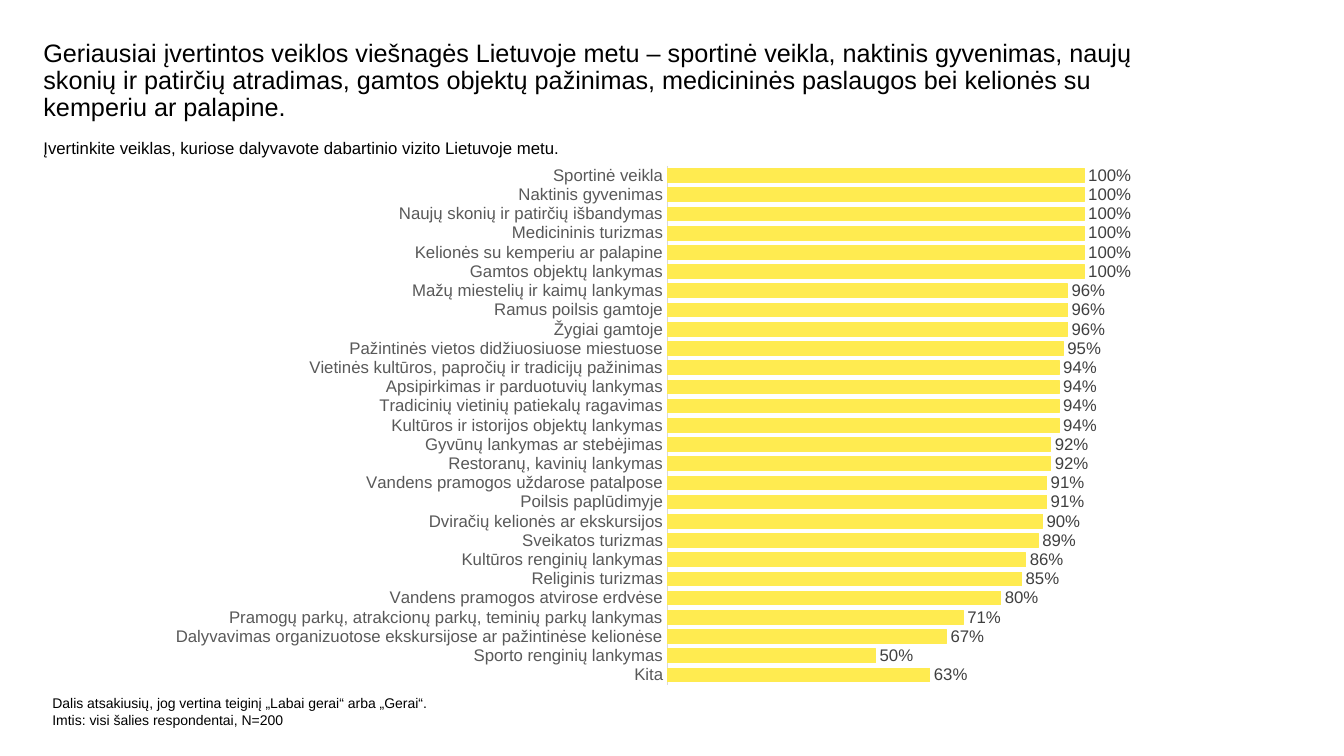
"""Build the slide rating activities during a stay in Lithuania."""
from pptx import Presentation
from pptx.chart.data import CategoryChartData
from pptx.dml.color import RGBColor
from pptx.enum.chart import XL_CHART_TYPE, XL_LABEL_POSITION, XL_TICK_MARK
from pptx.enum.text import MSO_ANCHOR, MSO_AUTO_SIZE, PP_ALIGN
from pptx.oxml import parse_xml
from pptx.oxml.ns import nsdecls, qn
from pptx.util import Pt

BLACK = RGBColor(0x00, 0x00, 0x00)
YELLOW = RGBColor(0xFF, 0xEB, 0x50)
AXIS_GREY = RGBColor(0xD9, 0xD9, 0xD9)
CATEGORY_GREY = RGBColor(0x59, 0x59, 0x59)
LABEL_GREY = RGBColor(0x40, 0x40, 0x40)

RATINGS = [
    ("Sportinė veikla", 1),
    ("Naktinis gyvenimas", 1),
    ("Naujų skonių ir patirčių išbandymas", 1),
    ("Medicininis turizmas", 1),
    ("Kelionės su kemperiu ar palapine", 1),
    ("Gamtos objektų lankymas", 1),
    ("Mažų miestelių ir kaimų lankymas", 0.96),
    ("Ramus poilsis gamtoje", 0.96),
    ("Žygiai gamtoje", 0.96),
    ("Pažintinės vietos didžiuosiuose miestuose", 0.95),
    ("Vietinės kultūros, papročių ir tradicijų pažinimas", 0.94),
    ("Apsipirkimas ir parduotuvių lankymas", 0.94),
    ("Tradicinių vietinių patiekalų ragavimas", 0.94),
    ("Kultūros ir istorijos objektų lankymas", 0.94),
    ("Gyvūnų lankymas ar stebėjimas", 0.92),
    ("Restoranų, kavinių lankymas", 0.92),
    ("Vandens pramogos uždarose patalpose", 0.91),
    ("Poilsis paplūdimyje", 0.91),
    ("Dviračių kelionės ar ekskursijos", 0.9),
    ("Sveikatos turizmas", 0.89),
    ("Kultūros renginių lankymas", 0.86),
    ("Religinis turizmas", 0.85),
    ("Vandens pramogos atvirose erdvėse", 0.8),
    ("Pramogų parkų, atrakcionų parkų, teminių parkų lankymas", 0.71),
    ("Dalyvavimas organizuotose ekskursijose ar pažintinėse kelionėse", 0.67),
    ("Sporto renginių lankymas", 0.5),
    ("Kita", 0.63),
]


def set_font(font, size, color):
    font.name = "Arial"
    font.size = Pt(size)
    font.bold = False
    font.color.rgb = color


def write_text(shape, left, top, width, height, lines, size):
    shape.left, shape.top = Pt(left), Pt(top)
    shape.width, shape.height = Pt(width), Pt(height)
    frame = shape.text_frame
    frame.text = "\n".join(lines)
    frame.word_wrap = True
    frame.auto_size = MSO_AUTO_SIZE.NONE
    frame.vertical_anchor = MSO_ANCHOR.TOP
    frame.margin_left = frame.margin_right = frame.margin_top = frame.margin_bottom = 0
    for paragraph in frame.paragraphs:
        paragraph.alignment = PP_ALIGN.LEFT
        for run in paragraph.runs:
            set_font(run.font, size, BLACK)


presentation = Presentation()
presentation.slide_width, presentation.slide_height = Pt(960), Pt(540)
slide = presentation.slides.add_slide(presentation.slide_layouts[5])

headline = slide.shapes.title
write_text(headline, 31, 28.8, 810, 43.2, [
    "Geriausiai įvertintos veiklos viešnagės Lietuvoje metu – sportinė veikla, "
    "naktinis gyvenimas, naujų skonių ir patirčių atradimas, gamtos objektų pažinimas, "
    "medicininės paslaugos bei kelionės su kemperiu ar palapine."], 18)
headline.text_frame.paragraphs[0].line_spacing = 0.9

question = slide.shapes.add_textbox(0, 0, 0, 0)
write_text(question, 31, 98.6, 856, 44, [
    "Įvertinkite veiklas, kuriose dalyvavote dabartinio vizito Lietuvoje metu."], 12)

sample_note = slide.shapes.add_textbox(0, 0, 0, 0)
write_text(sample_note, 37.4, 496, 278, 31.7, [
    "Dalis atsakiusių, jog vertina teiginį „Labai gerai“ arba „Gerai“.",
    "Imtis: visi šalies respondentai, N=200"], 10)

rating_data = CategoryChartData(number_format="0%")
activities, shares = zip(*reversed(RATINGS))
rating_data.categories = activities
rating_data.add_series("Series 1", shares)
ratings = slide.shapes.add_chart(
    XL_CHART_TYPE.BAR_CLUSTERED, Pt(110.9), Pt(110.9), Pt(737.3), Pt(385.9), rating_data).chart
ratings.has_legend = False
ratings.has_title = False
set_font(ratings.font, 10, BLACK)

activity_axis = ratings.category_axis
activity_axis.major_tick_mark = XL_TICK_MARK.NONE
activity_axis.minor_tick_mark = XL_TICK_MARK.NONE
activity_axis.format.line.color.rgb = AXIS_GREY
activity_axis.format.line.width = Pt(0.75)
set_font(activity_axis.tick_labels.font, 12, CATEGORY_GREY)

share_axis = ratings.value_axis
share_axis.minimum_scale, share_axis.maximum_scale = 0, 1.2
share_axis.has_major_gridlines = False
share_axis.visible = False

bars = ratings.plots[0]
bars.gap_width = 40
bars.vary_by_categories = False
rating_series = bars.series[0]
rating_series.format.fill.solid()
rating_series.format.fill.fore_color.rgb = YELLOW
rating_series.format.line.color.rgb = YELLOW
rating_series.format.line.width = Pt(0.75)

share_labels = rating_series.data_labels
share_labels.show_value = True
share_labels.position = XL_LABEL_POSITION.OUTSIDE_END
share_labels.number_format = "0%"
share_labels.number_format_is_linked = False
set_font(share_labels.font, 12, LABEL_GREY)

plot_area = ratings.plots[0]._element.getparent()
for automatic_layout in plot_area.findall(qn("c:layout")):
    plot_area.remove(automatic_layout)
plot_area.insert(0, parse_xml(
    f'<c:layout {nsdecls("c")}><c:manualLayout><c:layoutTarget val="inner"/>'
    '<c:xMode val="edge"/><c:yMode val="edge"/><c:x val="0.496"/><c:y val="0.02"/>'
    '<c:w val="0.485"/><c:h val="0.96"/></c:manualLayout></c:layout>'))

presentation.save("out.pptx")
